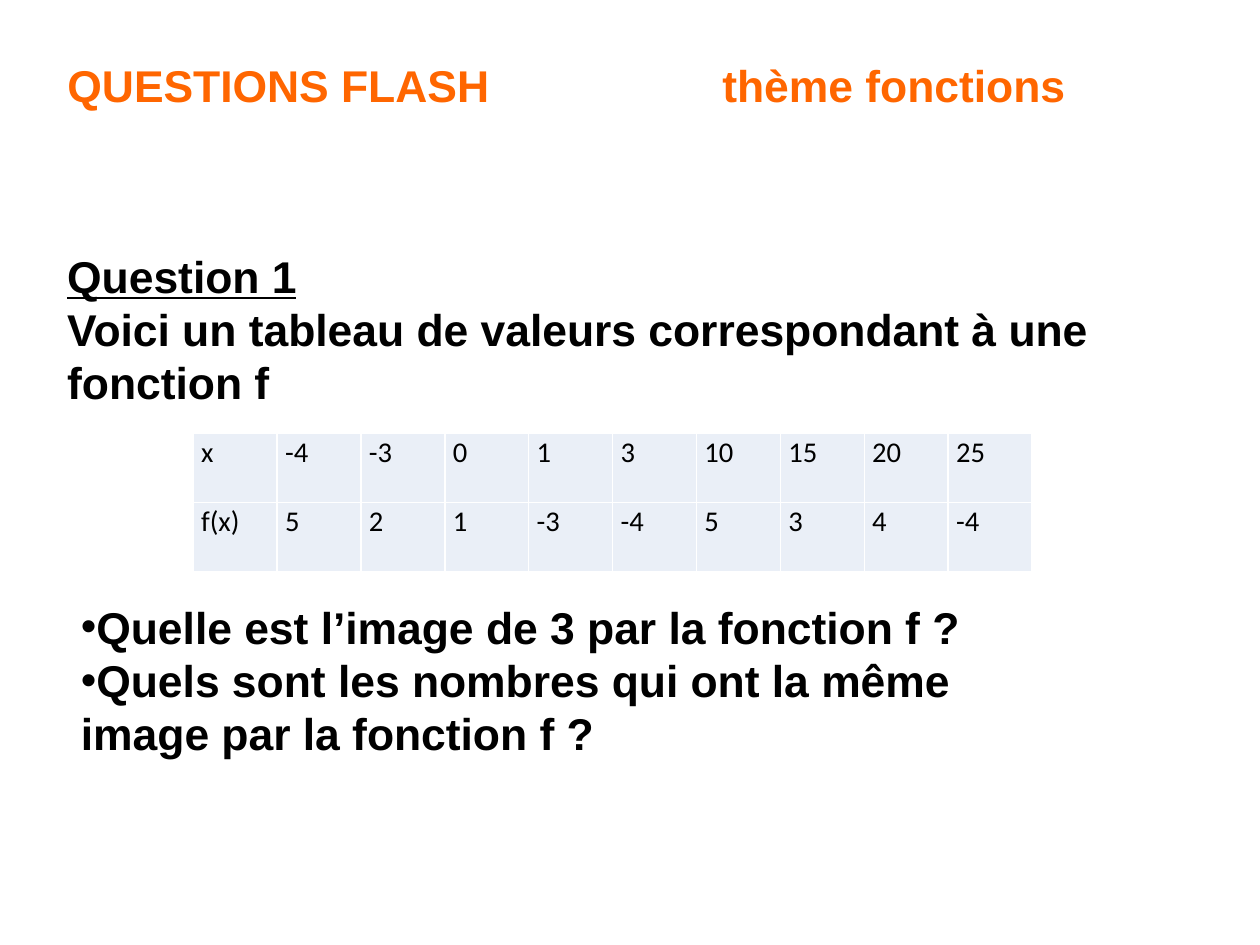
from lxml import etree
from pptx import Presentation
from pptx.dml.color import RGBColor
from pptx.enum import text
from pptx.oxml import ns
from pptx.util import Inches, Pt

CM_PER_INCH = 2.54
COLORS = {"title": "FF6600", "ink": "000000", "cell": "EAEFF7", "border": "FFFFFF"}
VALUES = [
    ["x", "-4", "-3", "0", "1", "3", "10", "15", "20", "25"],
    ["f(x)", "5", "2", "1", "-3", "-4", "5", "3", "4", "-4"],
]


def add_child(parent, tag, **attributes):
    return etree.SubElement(parent, ns.qn(tag), attributes)


def write(para, content, size=28, font="Arial", color="ink", bold=True,
          underline=False, spacing=Pt(33.5)):
    para.alignment = text.PP_ALIGN.LEFT
    para.line_spacing = spacing
    span = para.add_run()
    span.text = content
    span.font.size = Pt(size)
    span.font.name = font
    span.font.bold = bold
    span.font.underline = underline
    span.font.color.rgb = RGBColor.from_string(COLORS[color])


def add_title(page):
    title = page.shapes.title
    title.left, title.top = Inches(0.49), Inches(0.46)
    title.width, title.height = Inches(10.13), Inches(0.6)
    frame = title.text_frame
    frame.auto_size = text.MSO_AUTO_SIZE.NONE
    frame.vertical_anchor = text.MSO_ANCHOR.TOP
    para = frame.paragraphs[0]
    write(para, "QUESTIONS FLASH\tthème fonctions", color="title")
    tabs = add_child(para._p.get_or_add_pPr(), "a:tabLst")
    add_child(tabs, "a:tab", pos=str(Inches(5.73)), algn="l")


def add_text(page, left, top, width, height):
    box = page.shapes.add_textbox(Inches(left), Inches(top), Inches(width), Inches(height))
    box.text_frame.word_wrap = True
    return box.text_frame


def add_question(page):
    frame = add_text(page, 0.49, 2.13, 10.13, 1.5)
    write(frame.paragraphs[0], "Question 1", underline=True)
    write(frame.add_paragraph(),
          "Voici un tableau de valeurs correspondant à une fonction f")


def add_bullets(page, items):
    frame = add_text(page, 0.61, 5.2, 8.43, 1.82)
    for index, item in enumerate(items):
        para = frame.add_paragraph() if index else frame.paragraphs[0]
        write(para, item)
        properties = para._p.get_or_add_pPr()
        add_child(properties, "a:buFont", typeface="Arial")
        add_child(properties, "a:buChar", char="•")


def add_borders(cell):
    properties = cell._tc.get_or_add_tcPr()
    for side in ("a:lnL", "a:lnR", "a:lnT", "a:lnB"):
        line = add_child(properties, side, w=str(Pt(1)))
        add_child(add_child(line, "a:solidFill"), "a:srgbClr", val=COLORS["border"])


def add_values(page):
    table = page.shapes.add_table(len(VALUES), len(VALUES[0]), Inches(1.69),
                                  Inches(3.79), Inches(7.34), Inches(1.21)).table
    table.first_row = table.horz_banding = False
    for row, entries in enumerate(VALUES):
        for column, entry in enumerate(entries):
            cell = table.cell(row, column)
            cell.margin_left = cell.margin_right = Inches(0.07)
            cell.margin_top = cell.margin_bottom = 0
            write(cell.text_frame.paragraphs[0], entry, size=18, font="Calibri",
                  bold=False, spacing=1.07)
            add_borders(cell)
            cell.fill.solid()
            cell.fill.fore_color.rgb = RGBColor.from_string(COLORS["cell"])


def main():
    deck = Presentation()
    deck.slide_width = Inches(28 / CM_PER_INCH)
    deck.slide_height = Inches(21 / CM_PER_INCH)
    page = deck.slides.add_slide(deck.slide_layouts.get_by_name("Title Only"))
    add_title(page)
    add_question(page)
    add_values(page)
    add_bullets(page, [
        "Quelle est l’image de 3 par la fonction f ?",
        "Quels sont les nombres qui ont la même image par la fonction f ?",
    ])
    deck.save("out.pptx")


if __name__ == "__main__":
    main()
